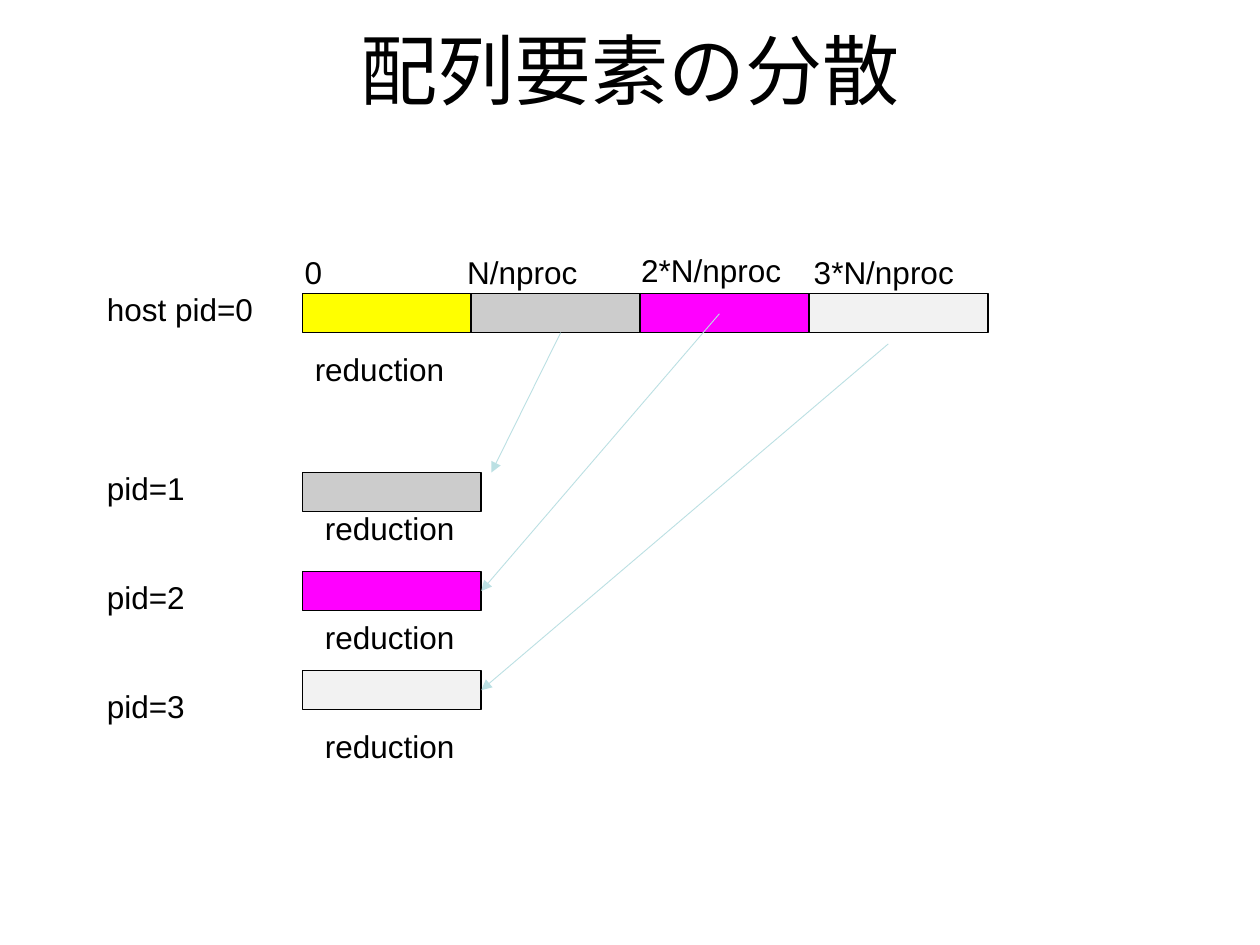
from typing import NamedTuple, Optional

from lxml.etree import SubElement
from pptx import Presentation
from pptx.dml.color import RGBColor
from pptx.enum.shapes import MSO_CONNECTOR, MSO_SHAPE
from pptx.enum.text import MSO_ANCHOR, MSO_AUTO_SIZE, PP_ALIGN
from pptx.oxml.ns import qn
from pptx.util import Pt

BLACK = RGBColor(0x00, 0x00, 0x00)
YELLOW = RGBColor(0xFF, 0xFF, 0x00)
GRAY = RGBColor(0xCC, 0xCC, 0xCC)
MAGENTA = RGBColor(0xFF, 0x00, 0xFF)
PALE_GRAY = RGBColor(0xF2, 0xF2, 0xF2)
PALE_BLUE = RGBColor(0xBB, 0xE0, 0xE3)

BLOCK_LEFT, BLOCK_WIDTH, BLOCK_HEIGHT = 172.8, 102.24, 22.32
HOST_TOP, HOST_STEP = 167.76, 96.48
PROCESS_TOP, PROCESS_STEP = 270, 56.6
LABEL_HEIGHT = 29


class Label(NamedTuple):
    text: str
    left: float
    top: float
    width: float


class Transfer(NamedTuple):
    start: tuple[float, float]
    end: tuple[float, float]
    source: Optional[object] = None
    target: Optional[object] = None


def add_block(shapes, left: float, top: float, color: RGBColor):
    block = shapes.add_shape(MSO_SHAPE.RECTANGLE, Pt(left), Pt(top),
                             Pt(BLOCK_WIDTH), Pt(BLOCK_HEIGHT))
    block.shadow.inherit = False
    block.fill.solid()
    block.fill.fore_color.rgb = color
    block.line.color.rgb = BLACK
    block.line.width = Pt(1)
    return block


def add_text(shapes, label: Label, height: float, size: float,
             frame_format: dict, align: PP_ALIGN = PP_ALIGN.LEFT) -> None:
    frame = shapes.add_textbox(Pt(label.left), Pt(label.top),
                               Pt(label.width), Pt(height)).text_frame
    for name, value in frame_format.items():
        setattr(frame, name, value)
    paragraph = frame.paragraphs[0]
    paragraph.alignment = align
    run = paragraph.add_run()
    run.text = label.text
    for name, value in {"name": "Arial", "size": Pt(size)}.items():
        setattr(run.font, name, value)
    run.font.color.rgb = BLACK


def add_transfer(shapes, transfer: Transfer) -> None:
    arrow = shapes.add_connector(
        MSO_CONNECTOR.STRAIGHT,
        *(Pt(value) for value in transfer.start + transfer.end))
    if transfer.source is not None:
        arrow.begin_connect(transfer.source, 2)
    if transfer.target is not None:
        arrow.end_connect(transfer.target, 3)
    arrow.line.color.rgb = PALE_BLUE
    arrow.line.width = Pt(0.5)
    properties = arrow._element.spPr
    SubElement(properties.find(qn("a:ln")), qn("a:tailEnd"), type="triangle")
    SubElement(properties, qn("a:effectLst"))


def main() -> None:
    presentation = Presentation()
    presentation.slide_width, presentation.slide_height = Pt(720), Pt(540)
    shapes = presentation.slides.add_slide(presentation.slide_layouts[6]).shapes

    # Title
    add_text(shapes, Label("配列要素の分散", 36, 3, 648), 72, 44,
             {"word_wrap": True, "vertical_anchor": MSO_ANCHOR.MIDDLE},
             PP_ALIGN.CENTER)

    # Whole array on the host, then the part each process receives
    part_colors = [GRAY, MAGENTA, PALE_GRAY]
    host_blocks = [add_block(shapes, BLOCK_LEFT + i * HOST_STEP, HOST_TOP, color)
                   for i, color in enumerate([YELLOW] + part_colors)]
    process_blocks = [add_block(shapes, BLOCK_LEFT, PROCESS_TOP + i * PROCESS_STEP, color)
                      for i, color in enumerate(part_colors)]

    # Transfers from the host to the processes
    right = BLOCK_LEFT + BLOCK_WIDTH
    for transfer in [
        Transfer((320.4, 190), (280.8, 270), source=host_blocks[1]),
        Transfer((507.6, 196.5), (right, 394.5), target=process_blocks[2]),
        Transfer((411.1, 179.3), (right, 337.7), target=process_blocks[1]),
    ]:
        add_transfer(shapes, transfer)

    # Process names, reduction steps and start indices
    labels = [
        Label("host pid=0", 54, 162, 98.6),
        Label("reduction", 172.8, 196.5, 89.3),
        Label("0", 167, 141.1, 24.5),
        Label("N/nproc", 259.9, 141.1, 78.5),
        Label("2*N/nproc", 359.3, 139.6, 95),
        Label("3*N/nproc", 457.9, 141.1, 95),
    ]
    for i in range(3):
        labels.append(Label(f"pid={i + 1}", 54, 264.3 + i * 62.3, 59.8))
        labels.append(Label("reduction", 178.6, 287.3 + i * 62.3, 89.3))
    for label in labels:
        add_text(shapes, label, LABEL_HEIGHT, 18,
                 {"word_wrap": False, "auto_size": MSO_AUTO_SIZE.SHAPE_TO_FIT_TEXT})

    presentation.save("out.pptx")


if __name__ == "__main__":
    main()
